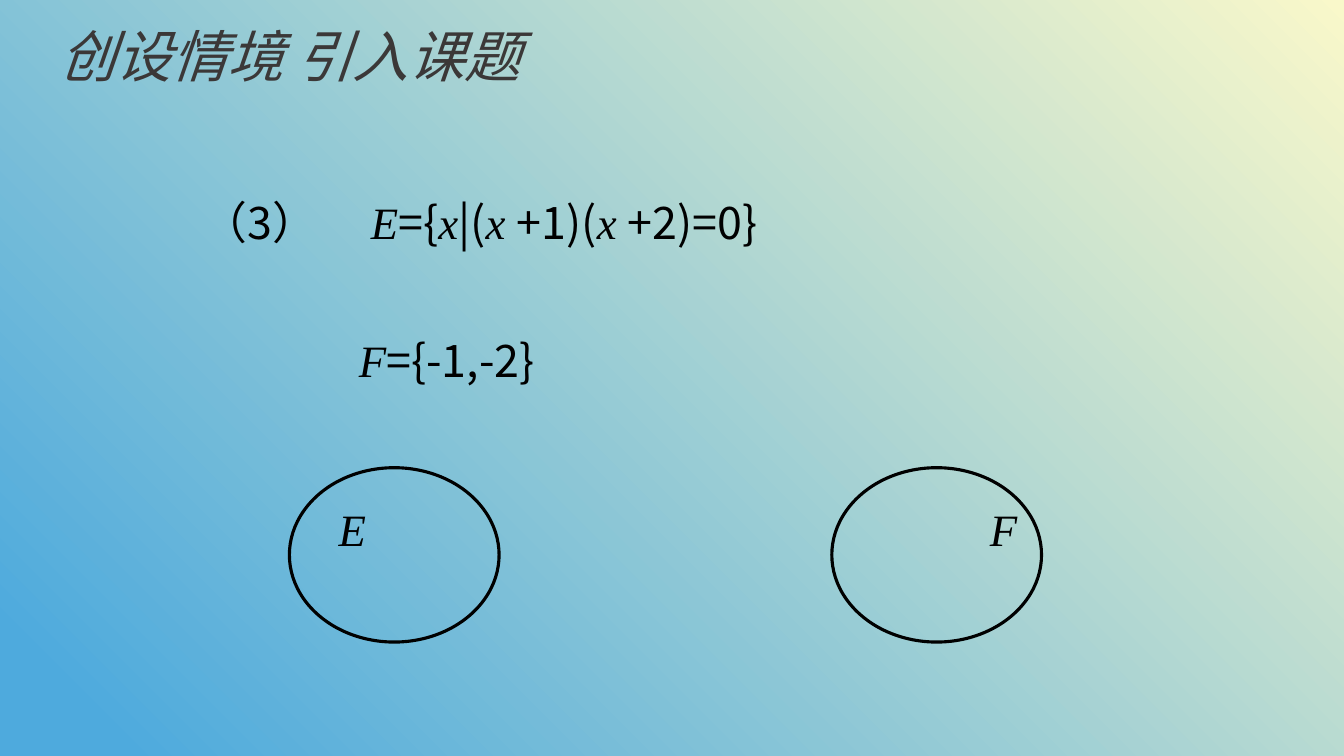
from lxml import etree
from pptx import Presentation
from pptx import util as u
from pptx.dml.color import RGBColor
from pptx.enum import shapes, text
from pptx.oxml import ns

COLORS = {"blue": "4EAADD", "yellow": "F9F8CA", "title": "3B3838", "ink": "000000"}
SANS, SERIF = "Noto Sans CJK SC", "Times New Roman"


def color(name):
    """Return the named colour."""
    return RGBColor.from_string(COLORS[name])


def add_run(paragraph, words, font_name, size=32, italic=False, ink="ink"):
    """Add one formatted run, for Latin and East Asian letters alike."""
    run = paragraph.add_run()
    run.text = words
    run.font.name = font_name
    run.font.size = u.Pt(size)
    run.font.bold = False
    run.font.italic = italic
    run.font.color.rgb = color(ink)
    east_asian = etree.SubElement(run.font._element, ns.qn("a:ea"))
    east_asian.set("typeface", font_name)


def add_line(slide, left, top, width, pieces, wrap=True, tab=None):
    """Add a line of text whose pieces are (words, is_variable) pairs."""
    box = slide.shapes.add_textbox(
        u.Inches(left), u.Inches(top), u.Inches(width), u.Inches(0.64))
    box.text_frame.word_wrap = wrap
    paragraph = box.text_frame.paragraphs[0]
    if tab:
        properties = paragraph._p.get_or_add_pPr()
        tab_list = etree.SubElement(properties, ns.qn("a:tabLst"))
        etree.SubElement(tab_list, ns.qn("a:tab"), pos=str(u.Inches(tab)), algn="l")
    for words, is_variable in pieces:
        add_run(paragraph, words, SERIF if is_variable else SANS, italic=is_variable)


def add_background(slide):
    """Fill the slide with a gradient rising to the top right."""
    fill = slide.background.fill
    fill.gradient()
    fill.gradient_angle = 45
    for stop, name, position in zip(fill.gradient_stops, ("blue", "yellow"), (0.06, 1)):
        stop.color.rgb = color(name)
        stop.position = position


def add_title(slide, left, top, width, height):
    """Place the italic heading in the title placeholder."""
    title = slide.shapes.title
    title.left, title.top = u.Inches(left), u.Inches(top)
    title.width, title.height = u.Inches(width), u.Inches(height)
    frame = title.text_frame
    frame.word_wrap = False
    frame.vertical_anchor = text.MSO_ANCHOR.MIDDLE
    paragraph = frame.paragraphs[0]
    paragraph.alignment = text.PP_ALIGN.CENTER
    add_run(paragraph, "创设情境 引入课题", SANS, 40, True, "title")


def add_set(slide, left, top, name, label_offset):
    """Draw a set as an ellipse with its name inside."""
    ellipse = slide.shapes.add_shape(
        shapes.MSO_SHAPE.OVAL, u.Inches(left), u.Inches(top), u.Inches(2.08), u.Inches(1.73))
    ellipse.shadow.inherit = False
    ellipse.fill.background()
    ellipse.line.color.rgb = color("ink")
    ellipse.line.width = u.Pt(2.25)
    add_line(slide, left + label_offset, top + 0.29, 0.47, [(name, True)], wrap=False)


def main():
    """Build and save the slide."""
    presentation = Presentation()
    presentation.slide_width = u.Inches(13.33)
    presentation.slide_height = u.Inches(7.5)
    slide = presentation.slides.add_slide(presentation.slide_layouts[5])
    add_background(slide)
    add_title(slide, -0.13, 0.04, 6.01, 1.01)
    add_set(slide, 2.87, 4.64, "E", 0.39)
    add_set(slide, 8.25, 4.64, "F", 1.47)
    add_line(slide, 1.91, 1.88, 8.75, [
        ("（3）\t", False), ("E", True), ("={", False), ("x", True), ("|(", False),
        ("x ", True), ("+1)(", False), ("x ", True), ("+2)=0}", False)], tab=1.67)
    add_line(slide, 3.46, 3.25, 8.75, [("F", True), ("={-1,-2}", False)])
    presentation.save("out.pptx")


if __name__ == "__main__":
    main()
